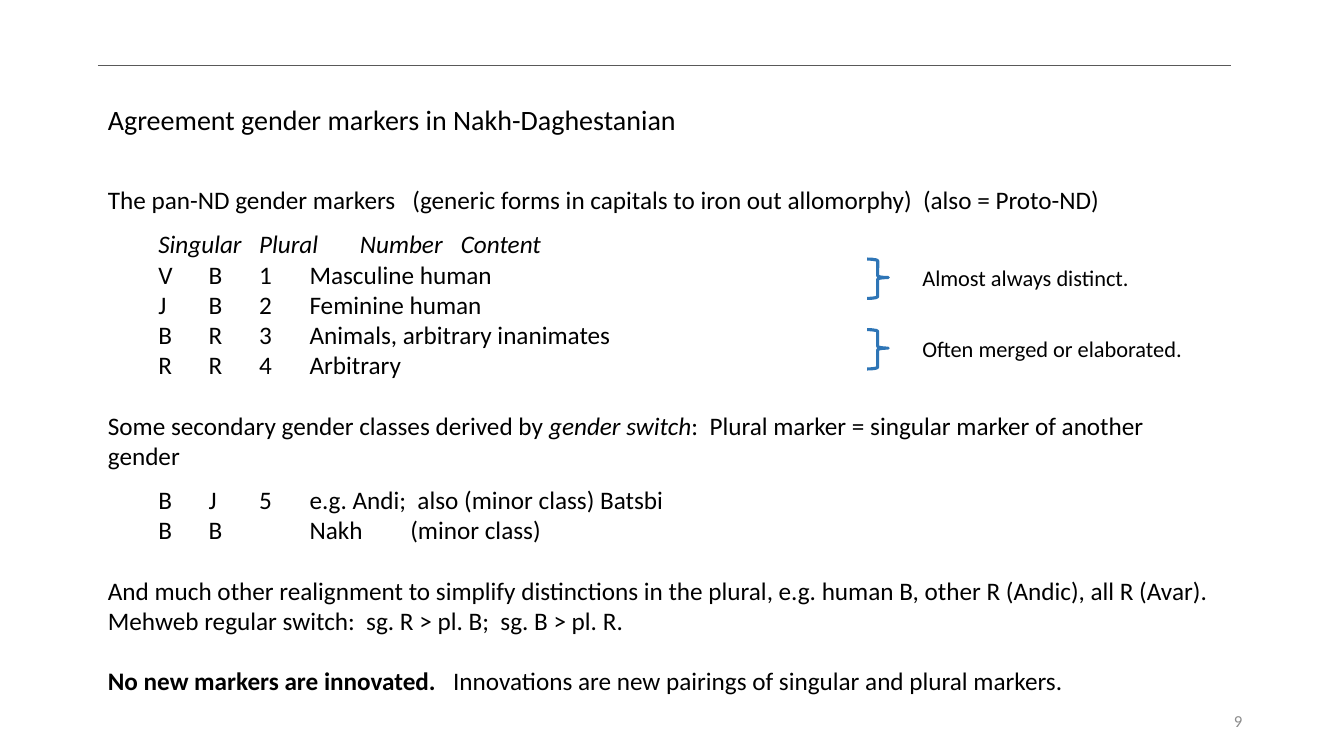
from lxml.etree import SubElement
from pptx import Presentation
from pptx.dml.color import RGBColor
from pptx.enum.shapes import MSO_CONNECTOR, MSO_SHAPE
from pptx.enum.text import MSO_ANCHOR, MSO_AUTO_SIZE, PP_ALIGN
from pptx.oxml.ns import qn
from pptx.util import Inches, Pt

COLUMN_STOPS = (0.5, 2, 3, 4, 5)
SMALL_GAP, LINE_GAP = 10, 21.5

# Each paragraph: its space after in points, then (text, style) spans.
PARAGRAPHS = [
    (SMALL_GAP, [("The pan-ND gender markers   (generic forms in capitals to iron out "
                  "allomorphy)  (also = Proto-ND)", "")]),
    (0, [("\tSingular\tPlural\tNumber\tContent", "italic")]),
    (0, [("\tV\tB\t1\tMasculine human", "")]),
    (0, [("\tJ\tB\t2\tFeminine human", "")]),
    (0, [("\tB\tR\t3\tAnimals, arbitrary inanimates", "")]),
    (LINE_GAP, [("\tR\tR\t4\tArbitrary", "")]),
    (SMALL_GAP, [("Some secondary gender classes derived by ", ""),
                 ("gender switch", "italic"),
                 (":  Plural marker = singular marker of another gender", "")]),
    (0, [("\tB\tJ\t5\te.g. Andi;  also (minor class) Batsbi", "")]),
    (LINE_GAP, [("\tB\tB\t\tNakh\t(minor class)", "")]),
    (LINE_GAP, [("And much other realignment to simplify distinctions in the plural, "
                 "e.g. human B, other R (Andic), all R (Avar).  Mehweb regular switch:  "
                 "sg. R > pl. B;  sg. B > pl. R.", "")]),
    (0, [("No new markers are innovated.  ", "bold"),
         (" Innovations are new pairings of singular and plural markers.", "")]),
]

BRACE_NOTES = [(2.57, "Almost always distinct."), (3.27, "Often merged or elaborated.")]


def color(hex_value):
    return RGBColor.from_string(hex_value)


class SlideBuilder:
    font_name = "Calibri"
    text_color = "000000"
    rule_color = "595959"
    brace_color = "2E75B6"
    muted_color = "8C8C8C"

    def __init__(self, deck):
        self.slide = deck.slides.add_slide(deck.slide_layouts[1])

    def place(self, shape, left, top, width, height):
        shape.left, shape.top = Inches(left), Inches(top)
        shape.width, shape.height = Inches(width), Inches(height)

    def style(self, span, size, hex_value=None):
        span.font.name = self.font_name
        span.font.size = Pt(size)
        span.font.color.rgb = color(hex_value or self.text_color)

    def prepare_frame(self, shape, anchor):
        frame = shape.text_frame
        frame.word_wrap = True
        frame.auto_size = MSO_AUTO_SIZE.NONE
        frame.vertical_anchor = anchor
        return frame

    def title(self, text, *bounds):
        title = self.slide.shapes.title
        self.place(title, *bounds)
        frame = self.prepare_frame(title, MSO_ANCHOR.TOP)
        frame.text = text
        para = frame.paragraphs[0]
        para.alignment = PP_ALIGN.LEFT
        self.style(para.runs[0], 20)

    def body(self, paragraphs, *bounds):
        body = self.slide.placeholders[1]
        self.place(body, *bounds)
        frame = self.prepare_frame(body, MSO_ANCHOR.TOP)
        for index, (space_after, spans) in enumerate(paragraphs):
            para = frame.add_paragraph() if index else frame.paragraphs[0]
            para.line_spacing = 1.0
            para.space_before = Pt(0)
            para.space_after = Pt(space_after)
            self.set_columns(para)
            for text, emphasis in spans:
                span = para.add_run()
                span.text = text
                self.style(span, 18)
                span.font.bold = emphasis == "bold"
                span.font.italic = emphasis == "italic"

    def set_columns(self, para):
        """Remove the bullet and indent, and add the column tab stops."""
        properties = para._p.get_or_add_pPr()
        properties.set("marL", "0")
        properties.set("indent", "0")
        SubElement(properties, qn("a:buNone"))
        tab_list = SubElement(properties, qn("a:tabLst"))
        for stop in COLUMN_STOPS:
            SubElement(tab_list, qn("a:tab"), pos=str(Inches(stop)), algn="l")

    def label(self, text, size, bounds, hex_value=None, alignment=PP_ALIGN.LEFT):
        box = self.slide.shapes.add_textbox(*map(Inches, bounds))
        frame = self.prepare_frame(box, MSO_ANCHOR.MIDDLE)
        frame.text = text
        para = frame.paragraphs[0]
        para.alignment = alignment
        self.style(para.runs[0], size, hex_value)

    def rule(self, left, right, top):
        line = self.slide.shapes.add_connector(
            MSO_CONNECTOR.STRAIGHT, Inches(left), Inches(top), Inches(right), Inches(top))
        line.line.color.rgb = color(self.rule_color)
        line.line.width = Pt(0.75)
        SubElement(line._element.spPr, qn("a:effectLst"))

    def brace(self, *bounds):
        brace = self.slide.shapes.add_shape(MSO_SHAPE.RIGHT_BRACE, *map(Inches, bounds))
        brace.adjustments[0] = 0.08
        brace.adjustments[1] = 0.47
        brace.shadow.inherit = False
        brace.fill.background()
        brace.line.color.rgb = color(self.brace_color)
        brace.line.width = Pt(2.25)


def main():
    deck = Presentation()
    deck.slide_width, deck.slide_height = Inches(13.33), Inches(7.5)
    builder = SlideBuilder(deck)
    builder.rule(0.97, 12.21, 0.65)
    builder.title("Agreement gender markers in Nakh-Daghestanian", 0.97, 0.97, 11.24, 0.5)
    builder.body(PARAGRAPHS, 0.97, 1.78, 11.24, 5.52)
    for top, note in BRACE_NOTES:
        builder.brace(8.6, top, 0.21, 0.39)
        builder.label(note, 16, (9.05, top, 2.9, 0.37))
    builder.label("9", 12, (9.42, 6.95, 3, 0.4), builder.muted_color, PP_ALIGN.RIGHT)
    deck.save("out.pptx")


if __name__ == "__main__":
    main()
